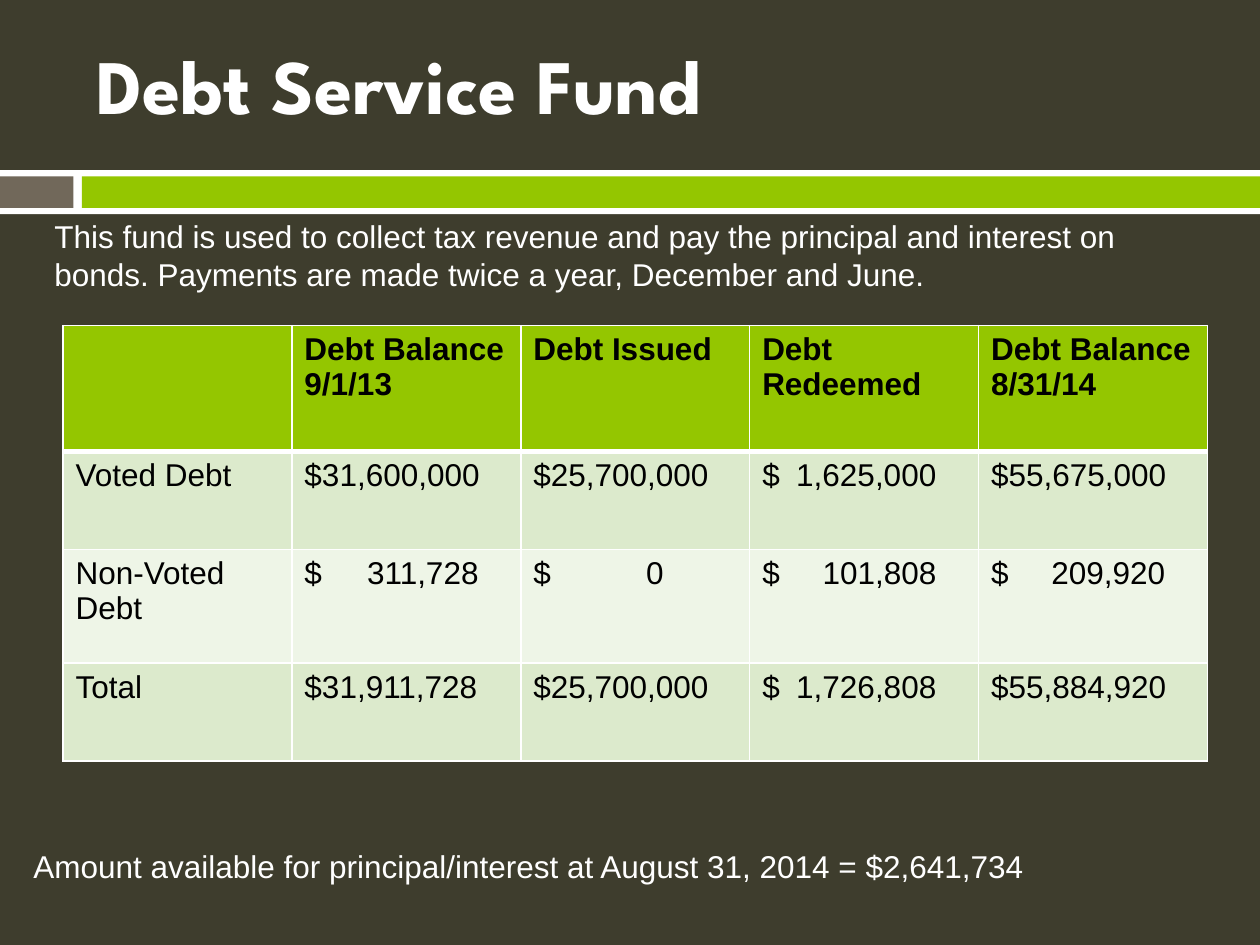
"""Build the Debt Service Fund slide with its debt balance table."""
from dataclasses import dataclass

import lxml.etree
import pptx
import pptx.dml.color
import pptx.enum.shapes
import pptx.enum.text
import pptx.oxml.ns
import pptx.util

Pt = pptx.util.Pt
qn = pptx.oxml.ns.qn


@dataclass(frozen=True)
class Theme:
    background: str = "3E3D2D"
    white: str = "FFFFFF"
    black: str = "000000"
    green: str = "94C600"
    taupe: str = "71685A"
    dark_band: str = "DCEACC"
    light_band: str = "EEF5E7"
    title_font: str = "League Spartan"
    body_font: str = "Arial"
    title_size: int = 44
    body_size: int = 18


theme = Theme()


def rgb(value):
    return pptx.dml.color.RGBColor.from_string(value)


def add_run(paragraph, text, color, font=theme.body_font, size=theme.body_size, bold=False):
    run = paragraph.add_run()
    run.text = text
    run.font.name = font
    run.font.size = Pt(size)
    run.font.bold = bold
    run.font.color.rgb = rgb(color)


presentation = pptx.Presentation()
presentation.slide_width = Pt(720)
presentation.slide_height = Pt(540)
slide = presentation.slides.add_slide(presentation.slide_layouts[6])
slide.background.fill.solid()
slide.background.fill.fore_color.rgb = rgb(theme.background)

bands = [
    (0, 97.2, 720, 25.2, theme.white),
    (0, 100.8, 42, 18, theme.taupe),
    (46.8, 100.8, 673.2, 18, theme.green),
]
for left, top, width, height, color in bands:
    shape = slide.shapes.add_shape(
        pptx.enum.shapes.MSO_SHAPE.RECTANGLE, Pt(left), Pt(top), Pt(width), Pt(height))
    shape.shadow.inherit = False
    shape.fill.solid()
    shape.fill.fore_color.rgb = rgb(color)
    shape.line.fill.background()

title_box = slide.shapes.add_textbox(Pt(48), Pt(0), Pt(624), Pt(96))
title_box.text_frame.word_wrap = True
title_box.text_frame.vertical_anchor = pptx.enum.text.MSO_ANCHOR.MIDDLE
add_run(title_box.text_frame.paragraphs[0], "Debt Service Fund", theme.white,
        theme.title_font, theme.title_size, True)

notes = [
    (24, 120, 51, "This fund is used to collect tax revenue and pay the principal and interest on "
                  "bonds. Payments are made twice a year, December and June."),
    (12, 480, 29, "Amount available for principal/interest at August 31, 2014 = $2,641,734"),
]
for left, top, height, text in notes:
    note_box = slide.shapes.add_textbox(Pt(left), Pt(top), Pt(672), Pt(height))
    note_box.text_frame.word_wrap = True
    paragraph = note_box.text_frame.paragraphs[0]
    paragraph.line_spacing = Pt(22)
    add_run(paragraph, text, theme.white)

rows = [
    ("", "Debt Balance 9/1/13", "Debt Issued", "Debt Redeemed", "Debt Balance 8/31/14"),
    ("Voted Debt", "$31,600,000", "$25,700,000", "$\t1,625,000", "$55,675,000"),
    ("Non-Voted Debt", "$\t311,728", "$\t0", "$\t101,808", "$\t209,920"),
    ("Total", "$31,911,728", "$25,700,000", "$\t1,726,808", "$55,884,920"),
]
row_heights = [72, 56, 65, 56]
row_fills = [theme.green, theme.dark_band, theme.light_band, theme.dark_band]
column_width = 130.8
amount_tab, zero_tab = 99.5, 74.5

table = slide.shapes.add_table(
    len(rows), len(rows[0]), Pt(36), Pt(186), Pt(column_width * len(rows[0])),
    Pt(sum(row_heights))).table
for column in table.columns:
    column.width = Pt(column_width)
for row_index, texts in enumerate(rows):
    table.rows[row_index].height = Pt(row_heights[row_index])
    for column_index, text in enumerate(texts):
        cell = table.cell(row_index, column_index)
        properties = cell._tc.get_or_add_tcPr()
        for side in ("lnL", "lnR", "lnT", "lnB"):
            under_header = (row_index, side) in ((0, "lnB"), (1, "lnT"))
            line = lxml.etree.SubElement(
                properties, qn(f"a:{side}"), w=str(Pt(3 if under_header else 1)))
            line_fill = lxml.etree.SubElement(line, qn("a:solidFill"))
            lxml.etree.SubElement(line_fill, qn("a:srgbClr"), val=theme.white)
        cell.fill.solid()
        cell.fill.fore_color.rgb = rgb(row_fills[row_index])
        paragraph = cell.text_frame.paragraphs[0]
        if "\t" in text:
            tab_position = zero_tab if text.endswith("\t0") else amount_tab
            tabs = lxml.etree.SubElement(paragraph._p.get_or_add_pPr(), qn("a:tabLst"))
            lxml.etree.SubElement(tabs, qn("a:tab"), pos=str(Pt(tab_position)), algn="r")
        if text:
            add_run(paragraph, text, theme.black, bold=row_index == 0)

presentation.save("out.pptx")
